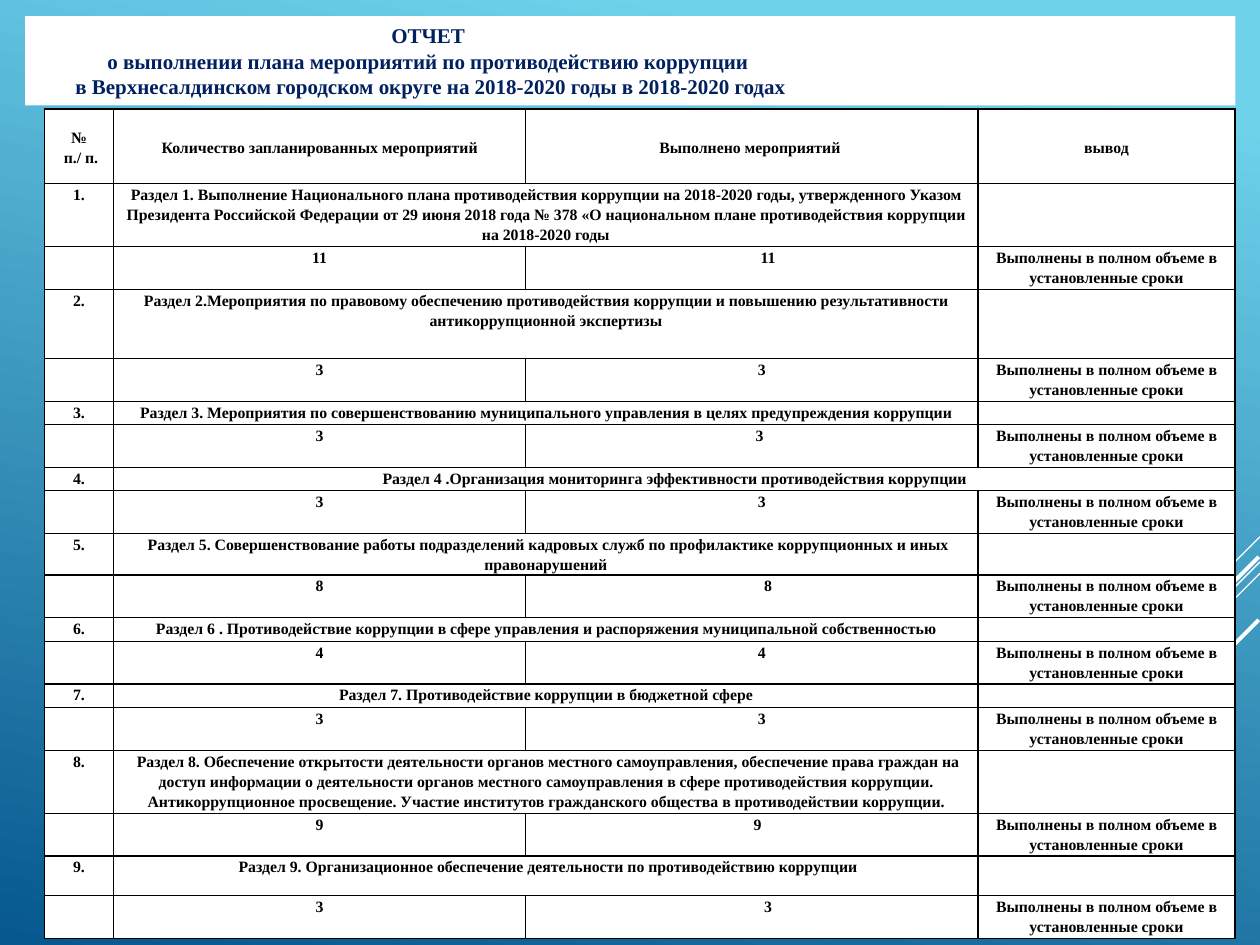
from dataclasses import dataclass

from lxml.etree import SubElement
from pptx import Presentation
from pptx.dml.color import RGBColor
from pptx.enum.shapes import MSO_CONNECTOR as CONN, MSO_SHAPE as SHAPE
from pptx.enum.text import MSO_ANCHOR as ANCHOR, MSO_AUTO_SIZE as AUTO, PP_ALIGN as ALIGN
from pptx.oxml.ns import qn
from pptx.util import Pt

FONT = "Times New Roman"
BLACK, WHITE, NAVY = "000000", "FFFFFF", "002060"
HEADERS = ["№\n п./ п.", "Количество запланированных мероприятий",
           "Выполнено мероприятий ", "вывод"]
RESULT = "Выполнены в полном объеме в установленные сроки"
COL_WIDTHS = [39.6, 235.4, 258.5, 146.9]
HEADER_H, COUNT_H = 42.5, 24.5


@dataclass
class Section:
    title: str
    height: float
    count: int
    indent: float  # first-line indent of the completed count
    last_col: int = 2  # last column the title spans


@dataclass
class Stripe:
    """Diagonal line running down and to the left at 45 degrees."""
    x: float
    y: float
    run: float
    width: float


SECTIONS = [
    Section("Раздел 1. Выполнение Национального плана противодействия коррупции на 2018-2020 годы, "
            "утвержденного Указом Президента Российской Федерации от 29 июня 2018 года № 378 "
            "«О национальном плане противодействия коррупции на 2018-2020 годы", 36, 11, 18.7),
    Section("Раздел 2.Мероприятия по правовому обеспечению противодействия коррупции и повышению "
            "результативности антикоррупционной экспертизы", 39.5, 3, 11.5),
    Section("Раздел 3. Мероприятия по совершенствованию муниципального управления в целях "
            "предупреждения коррупции", 13.3, 3, 9),
    Section("Раздел 4 .Организация мониторинга эффективности противодействия коррупции",
            13.3, 3, 11.5, last_col=3),
    Section(" Раздел 5. Совершенствование работы подразделений кадровых служб по профилактике "
            "коррупционных и иных правонарушений", 23.6, 8, 18.7),
    Section("Раздел 6 . Противодействие коррупции в сфере управления и распоряжения "
            "муниципальной собственностью", 13.5, 4, 11.5),
    Section("Раздел 7. Противодействие коррупции в бюджетной сфере", 13.3, 3, 11.5),
    Section(" Раздел 8. Обеспечение открытости деятельности органов местного самоуправления, "
            "обеспечение права граждан на доступ информации о деятельности органов местного "
            "самоуправления в сфере противодействия коррупции. Антикоррупционное просвещение. "
            "Участие институтов гражданского общества в противодействии коррупции.", 36, 9, 6.8),
    Section(" Раздел 9. Организационное обеспечение деятельности по противодействию коррупции",
            22.5, 3, 18.7),
]

STRIPES = [
    Stripe(720, 306.7, 59.8, 0.75),
    Stripe(720, 321.1, 194.8, 0.75),
    Stripe(720, 327.6, 123.8, 0.75),
    Stripe(719.3, 318.2, 113, 2.25),
    Stripe(719.3, 354.2, 82.1, 2.25),
]


def rgb(hex_code: str) -> RGBColor:
    return RGBColor.from_string(hex_code)


def fill_solid(obj, color: str) -> None:
    obj.fill.solid()
    obj.fill.fore_color.rgb = rgb(color)


def write(p, text: str, *, size: float, color: str = BLACK, spacing: float | None = None,
          indent: float = 0, right: float = 0) -> None:
    """Fill a centred bold paragraph; a vertical tab in the text is a line break."""
    p.text = text
    p.alignment = ALIGN.CENTER
    if spacing:
        p.line_spacing = spacing
    for name, value in (("indent", indent), ("marR", right)):
        if value:
            p._p.get_or_add_pPr().set(name, str(int(Pt(value))))
    for r in p.runs:
        r.font.name, r.font.size, r.font.bold = FONT, Pt(size), True
        r.font.color.rgb = rgb(color)
    # Line breaks and empty paragraphs keep the same text size
    sz = str(int(size * 100))
    for br in p._p.findall(qn("a:br")):
        SubElement(br, qn("a:rPr"), sz=sz)
    if not text:
        SubElement(p._p, qn("a:endParaRPr"), sz=sz)


def set_borders(cell, color: str, width: float) -> None:
    tcPr = cell._tc.get_or_add_tcPr()
    for i, side in enumerate(("lnL", "lnR", "lnT", "lnB")):
        ln = SubElement(tcPr, qn(f"a:{side}"), w=str(int(Pt(width))))
        SubElement(SubElement(ln, qn("a:solidFill")), qn("a:srgbClr"), val=color)
        tcPr.insert(i, ln)


def write_cell(cell, text: str, *, anchor=ANCHOR.TOP, indent: float = 0) -> None:
    cell.margin_left = cell.margin_right = Pt(4.3)
    cell.margin_top = cell.margin_bottom = 0
    cell.vertical_anchor = anchor
    fill_solid(cell, WHITE)
    set_borders(cell, BLACK, 1)
    tf = cell.text_frame
    for i, line in enumerate(text.split("\n")):
        p = tf.add_paragraph() if i else tf.paragraphs[0]
        write(p, line, size=9, spacing=1.15, indent=indent)


def draw_stripe(shapes, st: Stripe) -> None:
    line = shapes.add_connector(CONN.STRAIGHT, Pt(st.x), Pt(st.y),
                                Pt(st.x - st.run), Pt(st.y + st.run))
    line.line.color.rgb = rgb(WHITE)
    line.line.width = Pt(st.width)
    SubElement(line._element.spPr, qn("a:effectLst"))


def draw_table(s) -> None:
    heights = [HEADER_H] + [h for sec in SECTIONS for h in (sec.height, COUNT_H)]
    table = s.shapes.add_table(len(heights), len(COL_WIDTHS), Pt(25.3), Pt(62.4),
                               Pt(sum(COL_WIDTHS)), Pt(sum(heights))).table
    table.first_row = table.horz_banding = False
    for col, width in zip(table.columns, COL_WIDTHS):
        col.width = Pt(width)
    for row, height in zip(table.rows, heights):
        row.height = Pt(height)

    for c, text in enumerate(HEADERS):
        write_cell(table.cell(0, c), text, anchor=ANCHOR.MIDDLE)

    # Each section has a title row and a row of counts
    for n, sec in enumerate(SECTIONS, 1):
        top = 2 * n - 1
        for c, text in enumerate([f"{n}.", sec.title, "", ""]):
            write_cell(table.cell(top, c), text)
        table.cell(top, 1).merge(table.cell(top, sec.last_col))
        for c, text in enumerate(["", str(sec.count), str(sec.count), RESULT]):
            write_cell(table.cell(top + 1, c), text, indent=sec.indent if c == 2 else 0)


def draw_title(s) -> None:
    sp = s.shapes.add_shape(SHAPE.RECTANGLE, Pt(14.4), Pt(9.2), Pt(691.6), Pt(51))
    sp.shadow.inherit = False
    fill_solid(sp, WHITE)
    sp.line.fill.background()
    tf = sp.text_frame
    tf.word_wrap = True
    tf.auto_size = AUTO.SHAPE_TO_FIT_TEXT
    write(tf.paragraphs[0], "ОТЧЕТ", size=12, color=NAVY, right=231)
    write(tf.add_paragraph(),
          "о выполнении плана мероприятий по противодействию коррупции\v"
          " в Верхнесалдинском городском округе на 2018-2020 годы в 2018-2020 годах",
          size=12, color=NAVY)


def main() -> None:
    prs = Presentation()
    prs.slide_width, prs.slide_height = Pt(720), Pt(540)
    s = prs.slides.add_slide(prs.slide_layouts[6])

    # Background gradient, light at the top
    fill = s.background.fill
    fill.gradient()
    fill.gradient_angle = 258
    for stop, (pos, color) in zip(fill.gradient_stops, ((0.1, "6ED2EB"), (1, "06588E"))):
        stop.position = pos
        stop.color.rgb = rgb(color)

    # Diagonal stripes at the right edge
    group = s.shapes.add_group_shape()
    for st in STRIPES:
        draw_stripe(group.shapes, st)

    draw_table(s)
    draw_title(s)
    prs.save("out.pptx")


if __name__ == "__main__":
    main()
